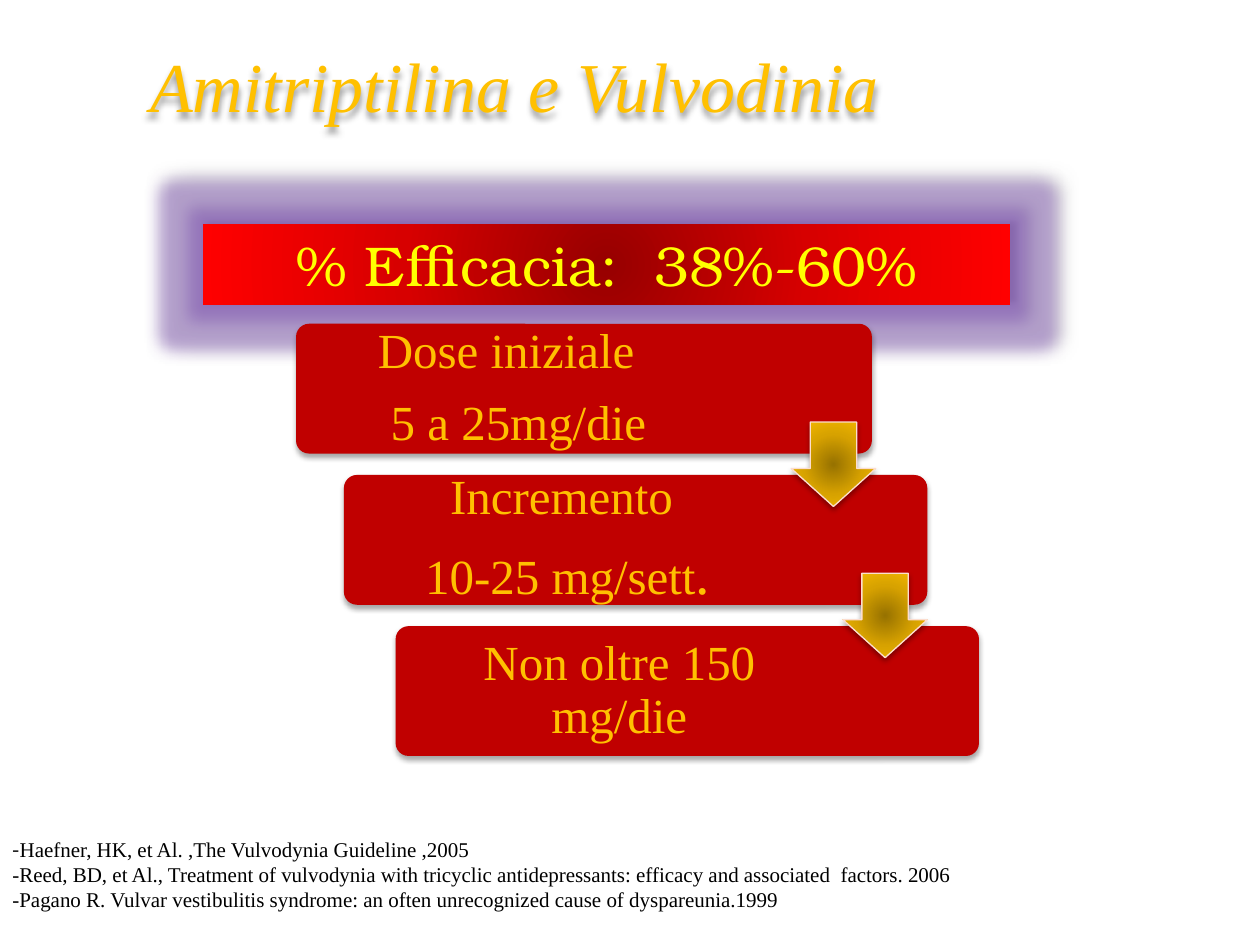
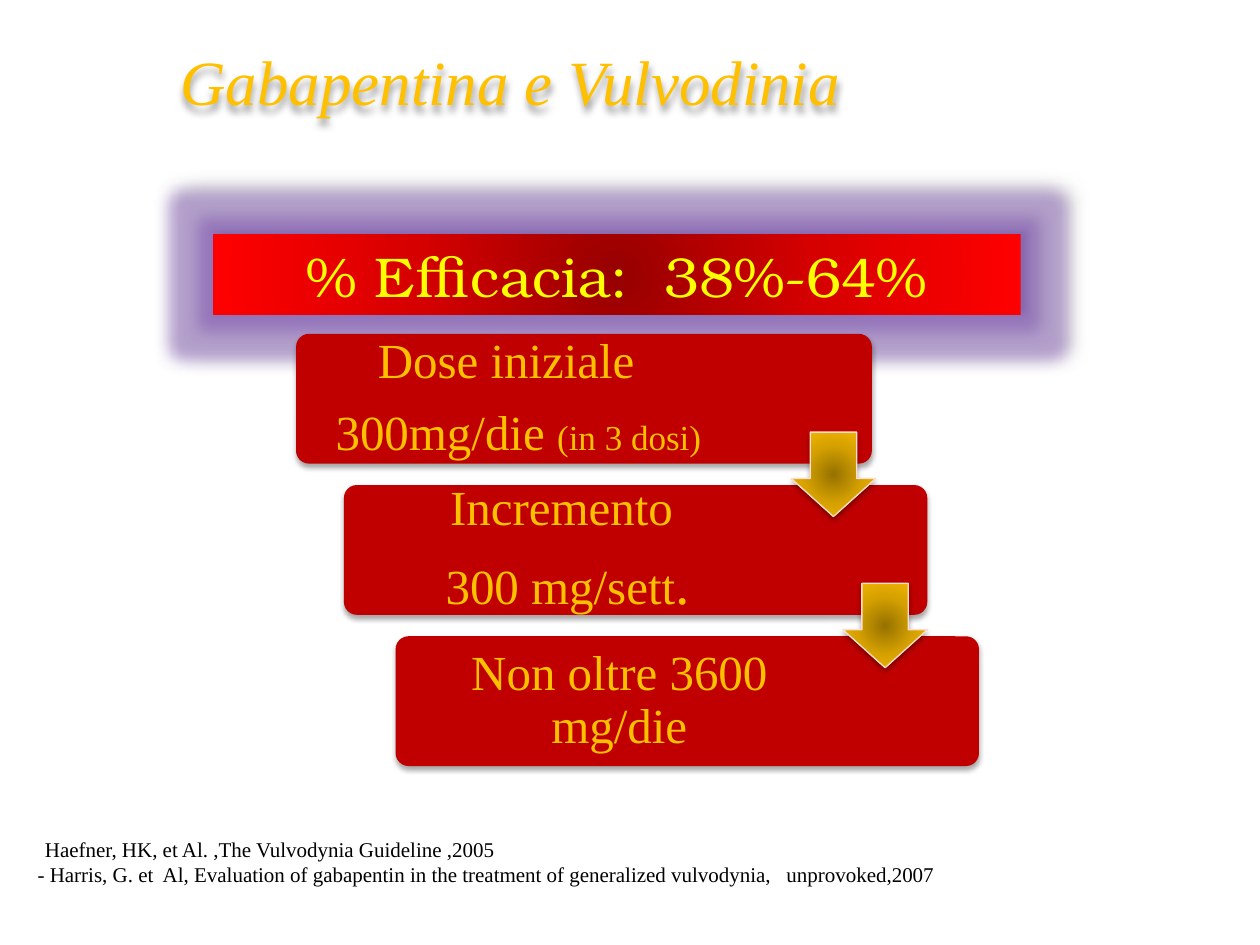
from lxml import etree
from pptx import Presentation
from pptx.dml.color import RGBColor
from pptx.enum import shapes, text
from pptx.util import Inches, Pt

COLORS = {"gold": "FFC000", "red": "C00000", "yellow": "FFFF00", "black": "000000",
          "white": "FFFFFF", "glow": "8064A2", "arrow_line": "FCDDCF"}
BAR_STOPS = ("970000", "D70000", "FF0000")
ARROW_STOPS = ("977200", "D7A200", "FFC000")
SERIF, BAR_FONT, DASH_FONT = "Times New Roman", "TeX Gyre Bonum", "Noto Sans CJK KR"
NS = 'xmlns:a="http://schemas.openxmlformats.org/drawingml/2006/main"'
EMU_PER_POINT = 12700

STEP_LEFTS = (2.35, 2.73, 3.14)
STEP_WIDTHS = (4.57, 4.63, 4.63)
TEXT_WIDTHS = (3.53, 3.55, 3.55)
STEP_HEIGHT, STEP_PITCH = 1.03, 1.2
ARROW_LEFTS = (6.28, 6.69)
ARROW_SIZE = 0.67

# Every paragraph is a list of (text, size) runs; references are (text, font, colour).
SLIDES = [
    {"title": "Amitriptilina e Vulvodinia", "title_box": (1.06, 0.29, 6.05, 0.77), "title_size": 40,
     "bar": "% Efficacia:  38%-60%", "bar_at": (1.61, 1.78), "steps_top": 2.57,
     "steps": [[[("Dose iniziale  ", 28)], [("5 a 25mg/die", 28)]],
               [[("Incremento ", 28)], [("10-25 mg/sett", 28), (".", 33)]],
               [[("Non oltre 150 mg/die", 28)]]],
     "references_box": (0, 6.59, 9.53, 0.91),
     "references": [
         [("-", DASH_FONT, "black"),
          ("Haefner, HK, et Al. ,The Vulvodynia Guideline ,2005", SERIF, "black")],
         [("-Reed, BD, et Al., Treatment of vulvodynia with tricyclic antidepressants: "
           "efficacy and associated  factors. 2006", SERIF, "black")],
         [("-Pagano R. Vulvar vestibulitis syndrome: an often unrecognized cause of "
           "dyspareunia.1999", SERIF, "black")]]},
    {"title": "Gabapentina e Vulvodinia", "title_box": (0.98, 0.29, 6.14, 0.71), "title_size": 36,
     "bar": "% Efficacia:  38%-64%", "bar_at": (1.69, 1.86), "steps_top": 2.65,
     "steps": [[[("Dose iniziale  ", 28)], [("300mg/die ", 28), ("(in 3 dosi)", 20)]],
               [[("Incremento ", 28)], [("300 mg/sett", 28), (".", 33)]],
               [[("Non oltre 3600 mg/die", 28)]]],
     "references_box": (0.2, 6.59, 8.75, 0.91),
     "references": [
         [("-", DASH_FONT, "white"),
          ("Haefner, HK, et Al. ,The Vulvodynia Guideline ,2005", SERIF, "black")],
         [("- Harris, G. et  Al, Evaluation of gabapentin in the treatment of generalized "
           "vulvodynia,   unprovoked,2007", SERIF, "black")]]},
]


def decorate(shape, stops=None, glow=None, shadow=(3.1, 1.8, 90, 35)):
    """Add a radial gradient, a glow radius and a (blur, distance, angle, alpha) shadow."""
    properties = shape._element.spPr
    if stops:
        marks = "".join(f'<a:gs pos="{i * 50000}"><a:srgbClr val="{stop}"/></a:gs>'
                        for i, stop in enumerate(stops))
        properties.insert(2, etree.fromstring(
            f'<a:gradFill {NS}><a:gsLst>{marks}</a:gsLst><a:path path="circle">'
            '<a:fillToRect l="50000" t="50000" r="50000" b="50000"/></a:path></a:gradFill>'))
    shape.shadow.inherit = False
    effects = properties[-1]
    if glow:
        effects.append(etree.fromstring(
            f'<a:glow {NS} rad="{Inches(glow)}"><a:srgbClr val="{COLORS["glow"]}">'
            '<a:satMod val="175000"/><a:alpha val="40000"/></a:srgbClr></a:glow>'))
    blur, distance, angle, alpha = shadow
    effects.append(etree.fromstring(
        f'<a:outerShdw {NS} blurRad="{round(blur * EMU_PER_POINT)}" '
        f'dist="{round(distance * EMU_PER_POINT)}" dir="{angle * 60000}" rotWithShape="0">'
        f'<a:srgbClr val="{COLORS["black"]}"><a:alpha val="{alpha * 1000}"/></a:srgbClr>'
        '</a:outerShdw>'))


def add_run(paragraph, content, size, color, font=SERIF, italic=False):
    run = paragraph.add_run()
    run.text = content
    run.font.size = Pt(size)
    run.font.name = font
    run.font.italic = italic
    run.font.color.rgb = RGBColor.from_string(COLORS[color])


presentation = Presentation()
presentation.slide_width, presentation.slide_height = Inches(10), Inches(7.5)

for content in SLIDES:
    slide = presentation.slides.add_slide(presentation.slide_layouts[6])

    references = slide.shapes.add_textbox(*map(Inches, content["references_box"])).text_frame
    references.word_wrap = True
    for i, runs in enumerate(content["references"]):
        paragraph = references.add_paragraph() if i else references.paragraphs[0]
        for words, font, color in runs:
            add_run(paragraph, words, 12, color, font)

    title = slide.shapes.add_textbox(*map(Inches, content["title_box"]))
    title.text_frame.word_wrap = True
    paragraph = title.text_frame.paragraphs[0]
    paragraph.alignment = text.PP_ALIGN.CENTER
    add_run(paragraph, content["title"], content["title_size"], "gold", italic=True)
    decorate(title, shadow=(4, 3, 90, 40))

    bar = slide.shapes.add_shape(shapes.MSO_SHAPE.RECTANGLE, *map(Inches, content["bar_at"]),
                                 Inches(6.41), Inches(0.64))
    bar.line.fill.background()
    decorate(bar, BAR_STOPS, glow=0.25, shadow=(4, 3, 315, 40))
    paragraph = bar.text_frame.paragraphs[0]
    paragraph.alignment = text.PP_ALIGN.CENTER
    add_run(paragraph, content["bar"], 32, "yellow", BAR_FONT)

    for i, paragraphs in enumerate(content["steps"]):
        left, top = Inches(STEP_LEFTS[i]), Inches(content["steps_top"] + i * STEP_PITCH)
        height = Inches(STEP_HEIGHT)
        step = slide.shapes.add_shape(shapes.MSO_SHAPE.ROUNDED_RECTANGLE, left, top,
                                      Inches(STEP_WIDTHS[i]), height)
        step.adjustments[0] = 0.1
        step.fill.solid()
        step.fill.fore_color.rgb = RGBColor.from_string(COLORS["red"])
        step.line.fill.background()
        decorate(step)

        frame = slide.shapes.add_textbox(left, top, Inches(TEXT_WIDTHS[i]), height).text_frame
        frame.word_wrap = True
        frame.vertical_anchor = text.MSO_ANCHOR.MIDDLE
        frame.margin_left = frame.margin_right = Inches(0.12)
        frame.margin_top = frame.margin_bottom = Inches(0.12)
        for j, runs in enumerate(paragraphs):
            paragraph = frame.add_paragraph() if j else frame.paragraphs[0]
            paragraph.alignment = text.PP_ALIGN.CENTER
            paragraph.line_spacing = 0.9
            paragraph.space_after = Pt(11)
            for words, size in runs:
                add_run(paragraph, words, size, "gold")

    for i, left in enumerate(ARROW_LEFTS):
        arrow = slide.shapes.add_shape(
            shapes.MSO_SHAPE.DOWN_ARROW, Inches(left),
            Inches(content["steps_top"] + 0.78 + i * STEP_PITCH),
            Inches(ARROW_SIZE), Inches(ARROW_SIZE))
        arrow.adjustments[0], arrow.adjustments[1] = 0.55, 0.45
        arrow.line.color.rgb = RGBColor.from_string(COLORS["arrow_line"])
        arrow.line.width = Pt(0.75)
        decorate(arrow, ARROW_STOPS)

presentation.save("out.pptx")
